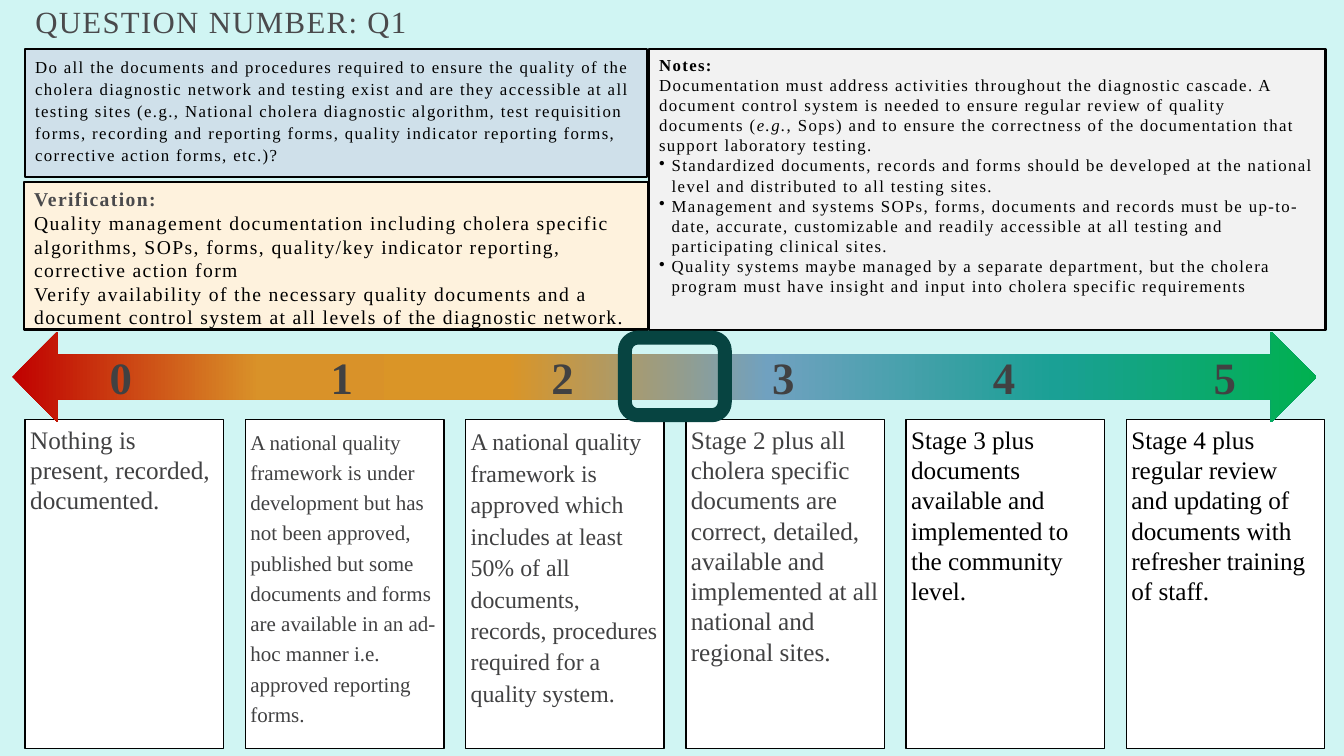
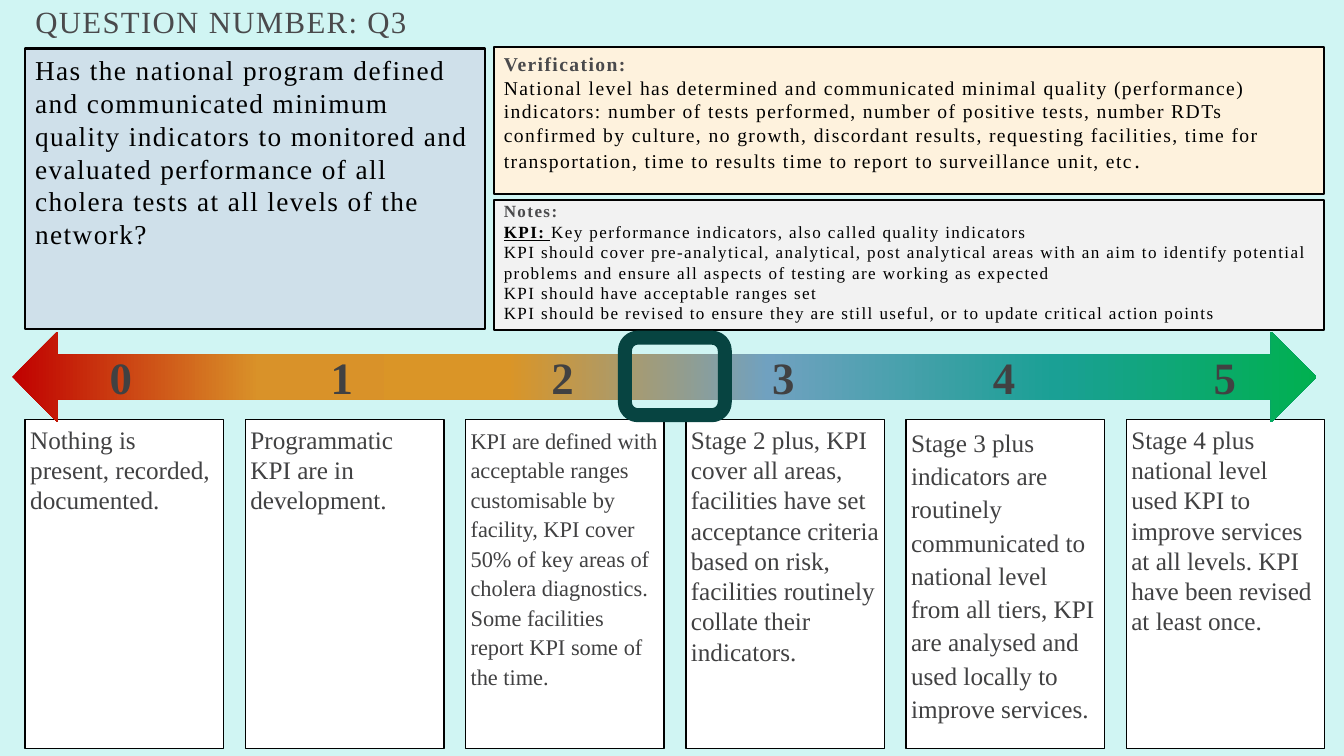
from lxml.etree import SubElement
from pptx import Presentation
from pptx.dml.color import RGBColor
from pptx.enum.shapes import MSO_SHAPE
from pptx.enum.text import MSO_ANCHOR, MSO_AUTO_SIZE, PP_ALIGN
from pptx.oxml.ns import qn
from pptx.util import Pt

BLACK, WHITE, GRAY, HEADING = "000000", "FFFFFF", "414142", "4A4A4C"
AQUA, BLUE, CREAM, SILVER, TEAL = "D0F5F3", "CFE0EA", "FEF2DD", "F2F2F2", "074441"
SCALE_STOPS = [(0, "C00000"), (19, "D99229"), (38, "DA9527"),
               (58, "70A1C0"), (80, "1AA095"), (100, "00B050")]
COLUMN_STEP, DIGIT_STEP = 157.3, 157.7


def add_text(frame, text, size=18, color=BLACK, bold=False, italic=False,
             underline=False, tracking=0, line_spacing=1.0,
             align=PP_ALIGN.LEFT, bullet=False, join=False):
    """Add text as a new paragraph, or to the last one when join is set."""
    paragraph = frame.paragraphs[-1]
    if paragraph.runs and not join:
        paragraph = frame.add_paragraph()
    if not join:
        paragraph.alignment = align
        paragraph.line_spacing = line_spacing
        paragraph.space_before = Pt(0)
        if bullet:
            properties = paragraph._p.get_or_add_pPr()
            properties.set("marL", str(Pt(9)))
            properties.set("indent", str(-Pt(9)))
            SubElement(properties, qn("a:buChar")).set("char", "•")
    run = paragraph.add_run()
    run.text = text
    font = run.font
    font.name, font.size = "Times New Roman", Pt(size)
    font.bold, font.italic, font.underline = bold, italic, underline
    font.color.rgb = RGBColor.from_string(color)
    run._r.get_or_add_rPr().set("spc", str(tracking * 100))


def add_block(shapes, kind, box, fill=None, line=None, line_width=1.0, inset=None):
    """Add a preset shape with its fill, outline and text margins."""
    block = shapes.add_shape(kind, *[Pt(length) for length in box])
    block.shadow.inherit = False
    if fill:
        block.fill.solid()
        block.fill.fore_color.rgb = RGBColor.from_string(fill)
    else:
        block.fill.background()
    if line:
        block.line.color.rgb = RGBColor.from_string(line)
        block.line.width = Pt(line_width)
    else:
        block.line.fill.background()
    frame = block.text_frame
    frame.word_wrap = True
    frame.vertical_anchor = MSO_ANCHOR.TOP
    if inset is not None:
        frame.margin_left = frame.margin_right = Pt(inset)
        frame.margin_top = frame.margin_bottom = Pt(inset)
    return block


# Content: panels hold (box, fill, paragraphs), stages hold (text, format)
verification_head = ("Verification:", dict(size=14, color=HEADING, bold=True))
questions = [
    dict(
        title="QUESTION NUMBER: Q1",
        panels=[
            ((18, 35.3, 444.2, 91.4), BLUE, [
                ("Do all the documents and procedures required to ensure the quality of the cholera diagnostic network and testing exist and are they accessible at all testing sites (e.g., National cholera diagnostic algorithm, test requisition forms, recording and reporting forms, quality indicator reporting forms, corrective action forms, etc.)?",
                 dict(size=12, line_spacing=1.1)),
            ]),
            ((463.7, 35.3, 483.1, 200.2), SILVER, [
                ("Notes:", dict(size=12, bold=True)),
                ("Documentation must address activities throughout the diagnostic cascade. A document control system is needed to ensure regular review of quality documents (", dict(size=12)),
                ("e.g.", dict(size=12, italic=True, join=True)),
                (", Sops) and to ensure the correctness of the documentation that support laboratory testing.", dict(size=12, join=True)),
                ("Standardized documents, records and forms should be developed at the national level and distributed to all testing sites.", dict(size=12, bullet=True)),
                ("Management and systems SOPs, forms, documents and records must be up-to-date, accurate, customizable and readily accessible at all testing and participating clinical sites.", dict(size=12, bullet=True)),
                ("Quality systems maybe managed by a separate department, but the cholera program must have insight and input into cholera specific requirements", dict(size=12, bullet=True)),
            ]),
            ((17.3, 130.3, 445.7, 105.1), CREAM, [
                verification_head,
                ("Quality management documentation including cholera specific algorithms, SOPs, forms, quality/key indicator reporting, corrective action form", dict(size=14)),
                ("Verify availability of the necessary quality documents and a document control system at all levels of the diagnostic network.", dict(size=14)),
            ]),
        ],
        stages=[
            ("Nothing is present, recorded, documented.", {}),
            ("A national quality framework is under development but has not been approved, published but some documents and forms are available in an ad-hoc manner i.e. approved reporting forms.", dict(size=15, line_spacing=1.2)),
            ("A national quality framework is approved which includes at least 50% of all documents, records, procedures required for a quality system.", dict(size=17, line_spacing=1.1)),
            ("Stage 2 plus all cholera specific documents are correct, detailed, available and implemented at all national and regional sites.", {}),
            ("Stage 3 plus documents available and implemented to the community level.", dict(color=BLACK)),
            ("Stage 4 plus regular review and updating of documents with refresher training of staff.", dict(color=BLACK)),
        ],
    ),
    dict(
        title="QUESTION NUMBER: Q3",
        panels=[
            ((18, 34.6, 328.3, 200.2), BLUE, [
                ("Has the national program defined and communicated minimum quality indicators to monitored and evaluated performance of all cholera tests at all levels of the network?", dict(size=19.5)),
            ]),
            ((352.8, 142.6, 593.3, 92.9), SILVER, [
                ("Notes:", dict(size=12.2, color=HEADING, bold=True, line_spacing=0.8)),
                ("KPI: ", dict(size=12.2, bold=True, underline=True)),
                ("Key performance indicators, also called quality indicators", dict(size=12.2, join=True)),
                ("KPI should cover pre-analytical, analytical, post analytical areas with an aim to identify potential problems and ensure all aspects of testing are working as expected", dict(size=12.2)),
                ("KPI should have acceptable ranges set", dict(size=12.2)),
                ("KPI should be revised to ensure they are still useful, or to update critical action points", dict(size=12.2)),
            ]),
            ((352.8, 33.8, 593.3, 105.1), CREAM, [
                verification_head,
                ("National level has determined and communicated minimal quality (performance) indicators: number of tests performed, number of positive tests, number RDTs confirmed by culture, no growth, discordant results, requesting facilities, time for transportation, time to results time to report to surveillance unit, etc", dict(size=14)),
                (".", dict(size=16, join=True)),
            ]),
        ],
        stages=[
            ("Nothing is present, recorded, documented.", {}),
            ("Programmatic KPI are in development.", {}),
            ("KPI are defined with acceptable ranges customisable by facility, KPI cover 50% of key areas of cholera diagnostics. Some facilities report KPI some of the time.", dict(size=16, line_spacing=1.1)),
            ("Stage 2 plus, KPI cover all areas, facilities have set acceptance criteria based on risk, facilities routinely collate their indicators.", {}),
            ("Stage 3 plus indicators are routinely communicated to national level from all tiers, KPI are analysed and used locally to improve services.", dict(line_spacing=1.1)),
            ("Stage 4 plus national level used KPI to improve services at all levels. KPI have been revised at least once.", {}),
        ],
    ),
]

deck = Presentation()
deck.slide_width, deck.slide_height = Pt(960), Pt(540)
background = deck.slide_master.background.fill
background.solid()
background.fore_color.rgb = RGBColor.from_string(AQUA)

for question in questions:
    slide = deck.slides.add_slide(deck.slide_layouts[5])

    # Title
    title = slide.shapes.title
    title.left, title.top, title.width, title.height = Pt(18), Pt(3.6), Pt(433), Pt(32.4)
    title.text_frame.auto_size = MSO_AUTO_SIZE.NONE
    title.text_frame.vertical_anchor = MSO_ANCHOR.TOP
    add_text(title.text_frame, question["title"], size=22, color=HEADING,
             tracking=1, line_spacing=0.8)

    # Stage descriptions
    columns = slide.shapes.add_group_shape().shapes
    for stage, (description, style) in enumerate(question["stages"]):
        column = add_block(columns, MSO_SHAPE.RECTANGLE,
                           (18 + stage * COLUMN_STEP, 299.5, 141.8, 235.4),
                           WHITE, BLACK, inset=3.6)
        add_text(column.text_frame, description, **{"color": GRAY, **style})

    # Question, notes and verification
    for box, fill, paragraphs in question["panels"]:
        panel = add_block(slide.shapes, MSO_SHAPE.RECTANGLE, box, fill, BLACK, 1.5)
        for text, style in paragraphs:
            add_text(panel.text_frame, text, tracking=1, **style)

    # Score scale
    scale = slide.shapes.add_group_shape().shapes
    arrow = add_block(scale, MSO_SHAPE.LEFT_RIGHT_ARROW, (8.6, 236.9, 931.7, 64.8))
    arrow.fill.gradient()
    arrow.fill.gradient_angle = 0
    stops = arrow._element.spPr.find(".//" + qn("a:gsLst"))
    for stop in list(stops):
        stops.remove(stop)
    for position, color in SCALE_STOPS:
        stop = SubElement(stops, qn("a:gs"))
        stop.set("pos", str(position * 1000))
        SubElement(stop, qn("a:srgbClr")).set("val", color)
    for score in range(6):
        digit = scale.add_textbox(Pt(60.5 + score * DIGIT_STEP), Pt(258.5), Pt(51.8), Pt(20.9))
        digit.text_frame.word_wrap = True
        digit.text_frame.vertical_anchor = MSO_ANCHOR.MIDDLE
        add_text(digit.text_frame, str(score), size=32, color=GRAY, bold=True,
                 align=PP_ALIGN.CENTER)

    # Score marker
    add_block(slide.shapes, MSO_SHAPE.ROUNDED_RECTANGLE, (446.4, 241.2, 71.3, 55.4),
              line=TEAL, line_width=10)

deck.save("out.pptx")
